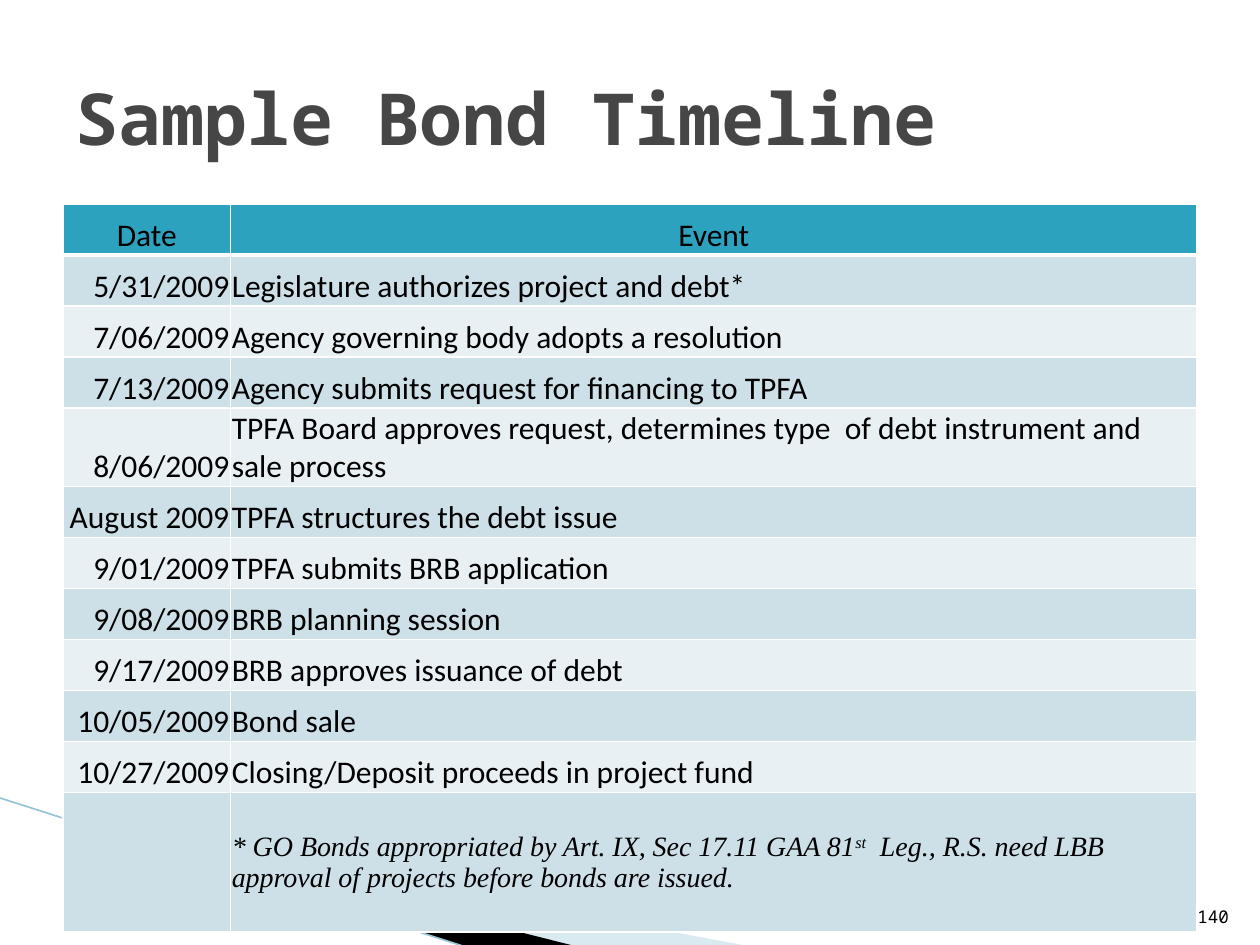
from dataclasses import dataclass
from typing import NamedTuple

from lxml import etree
from pptx import Presentation
from pptx import util as u
from pptx.dml.color import RGBColor
from pptx.enum import shapes, text
from pptx.oxml import ns

ALIGN = text.PP_ALIGN
ANCHOR = text.MSO_ANCHOR


@dataclass(frozen=True)
class Theme:
    heading: str = "464646"
    ink: str = "000000"
    rule: str = "FFFFFF"
    header: str = "2DA2BF"
    bands: tuple[str, str] = ("CDE0E8", "E8F0F4")
    swoosh: str = "A0CBDC"
    edge: str = "97C5D8"
    mono: str = "Noto Sans Mono"
    body: str = "Calibri"
    serif: str = "Times New Roman"
    title_size: float = 41
    body_size: float = 18
    note_size: float = 16
    number_size: float = 10


THEME = Theme()


class Milestone(NamedTuple):
    date: str
    event: str
    lines: int = 1


class Wedge(NamedTuple):
    points: list[tuple[float, float]]
    color: str
    opacity: int = 100


WEDGES = [
    Wedge([(0.55, 6.51), (5.95, 7.51), (4.56, 7.51), (0.55, 6.5)], THEME.swoosh, 40),
    Wedge([(0.53, 6.49), (4.57, 7.51), (3.72, 7.52), (0.54, 6.5)], THEME.ink),
]

MILESTONES = [
    Milestone("5/31/2009", "Legislature authorizes project and debt*"),
    Milestone("7/06/2009", "Agency governing body adopts a resolution"),
    Milestone("7/13/2009", "Agency submits request for financing to TPFA"),
    Milestone("8/06/2009", "TPFA Board approves request, determines type  of debt "
                           "instrument and sale process", lines=2),
    Milestone("August 2009", "TPFA structures the debt issue"),
    Milestone("9/01/2009", "TPFA submits BRB application"),
    Milestone("9/08/2009", "BRB planning session"),
    Milestone("9/17/2009", "BRB approves issuance of debt"),
    Milestone("10/05/2009", "Bond sale"),
    Milestone("10/27/2009", "Closing/Deposit proceeds in project fund"),
]

# Row heights: single-line rows share what the two tall rows leave
TABLE_HEIGHT, TWO_LINE_ROW, NOTE_ROW = 5.78, 0.62, 1.11
SINGLE_ROW = (TABLE_HEIGHT - TWO_LINE_ROW - NOTE_ROW) / len(MILESTONES)


def write(paragraph, words: str, *, font: str = THEME.body,
          size: float = THEME.body_size, color: str = THEME.ink, bold: bool = False,
          italic: bool = False, align=ALIGN.LEFT, raised: bool = False) -> None:
    """Add one formatted run to a paragraph."""
    paragraph.alignment = align
    run = paragraph.add_run()
    run.text = words
    run.font.name = font
    run.font.size = u.Pt(size)
    run.font.bold = bold
    run.font.italic = italic
    run.font.color.rgb = RGBColor.from_string(color)
    if raised:
        run._r.get_or_add_rPr().set("baseline", "30000")


def draw_wedge(slide, wedge: Wedge) -> None:
    start, *rest = [(u.Inches(x), u.Inches(y)) for x, y in wedge.points]
    builder = slide.shapes.build_freeform(*start)
    builder.add_line_segments(rest, close=True)
    shape = builder.convert_to_shape()
    shape.shadow.inherit = False
    shape.line.fill.background()
    shape.fill.solid()
    shape.fill.fore_color.rgb = RGBColor.from_string(wedge.color)
    if wedge.opacity < 100:
        color = shape._element.spPr.find(".//" + ns.qn("a:srgbClr"))
        etree.SubElement(color, ns.qn("a:alpha"), val=str(wedge.opacity * 1000))


def draw_edge(slide) -> None:
    edge = slide.shapes.add_connector(
        shapes.MSO_CONNECTOR.STRAIGHT,
        u.Inches(-0.01), u.Inches(6.33), u.Inches(3.71), u.Inches(7.52))
    edge.line.color.rgb = RGBColor.from_string(THEME.edge)
    edge.line.width = u.Pt(0.95)
    etree.SubElement(edge._element.spPr, ns.qn("a:effectLst"))


def style_cell(cell, fill: str, bottom: float = 1, top: float = 1) -> None:
    """Set a cell's margins, white borders and fill."""
    cell.margin_left = cell.margin_right = cell.margin_top = u.Inches(0.01)
    cell.margin_bottom = 0
    cell.vertical_anchor = ANCHOR.BOTTOM
    properties = cell._tc.get_or_add_tcPr()
    for side, width in (("L", 1), ("R", 1), ("T", top), ("B", bottom)):
        border = etree.SubElement(properties, ns.qn(f"a:ln{side}"), w=str(u.Pt(width)))
        solid = etree.SubElement(border, ns.qn("a:solidFill"))
        etree.SubElement(solid, ns.qn("a:srgbClr"), val=THEME.rule)
    cell.fill.solid()
    cell.fill.fore_color.rgb = RGBColor.from_string(fill)


def draw_timeline(slide) -> None:
    count = len(MILESTONES) + 2
    table = slide.shapes.add_table(
        count, 2, u.Inches(0.5), u.Inches(1.62),
        u.Inches(9), u.Inches(TABLE_HEIGHT)).table
    for column, width in zip(table.columns, (1.33, 7.67)):
        column.width = u.Inches(width)

    # Header
    table.rows[0].height = u.Inches(SINGLE_ROW)
    for cell, heading in zip(table.rows[0].cells, ("Date", "Event")):
        style_cell(cell, THEME.header, bottom=3)
        write(cell.text_frame.paragraphs[0], heading, align=ALIGN.CENTER)

    # Banded body, footnote row included
    for index in range(1, count):
        for cell in table.rows[index].cells:
            style_cell(cell, THEME.bands[(index - 1) % 2], top=3 if index == 1 else 1)

    # Milestones
    for index, milestone in enumerate(MILESTONES, start=1):
        row = table.rows[index]
        row.height = u.Inches(SINGLE_ROW if milestone.lines == 1 else TWO_LINE_ROW)
        date, event = (cell.text_frame.paragraphs[0] for cell in row.cells)
        write(date, milestone.date, align=ALIGN.RIGHT)
        write(event, milestone.event)

    # Footnote
    table.rows[count - 1].height = u.Inches(NOTE_ROW)
    footnote = table.cell(count - 1, 1)
    footnote.vertical_anchor = ANCHOR.MIDDLE
    for words, raised in (
            ("* GO Bonds appropriated by Art. IX, Sec 17.11 GAA 81", False),
            ("st", True),
            ("  Leg., R.S. need LBB approval of projects before bonds are issued.", False)):
        write(footnote.text_frame.paragraphs[0], words, font=THEME.serif,
              size=THEME.note_size, italic=True, raised=raised)


def draw_title(slide) -> None:
    title = slide.shapes.title
    title.left, title.top = u.Inches(0.5), u.Inches(0.3)
    title.width, title.height = u.Inches(9), u.Inches(1.25)
    title.text_frame.vertical_anchor = ANCHOR.MIDDLE
    write(title.text_frame.paragraphs[0], "Sample Bond Timeline", font=THEME.mono,
          size=THEME.title_size, color=THEME.heading, bold=True)


def draw_page_number(slide) -> None:
    frame = slide.shapes.add_textbox(
        u.Inches(9.33), u.Inches(7.01), u.Inches(0.52), u.Inches(0.4)).text_frame
    frame.word_wrap = True
    frame.vertical_anchor = ANCHOR.BOTTOM
    write(frame.paragraphs[0], "140", font=THEME.mono, size=THEME.number_size,
          align=ALIGN.RIGHT)


def main() -> None:
    deck = Presentation()
    deck.slide_width, deck.slide_height = u.Inches(10), u.Inches(7.5)
    slide = deck.slides.add_slide(deck.slide_layouts[5])
    for wedge in WEDGES:
        draw_wedge(slide, wedge)
    draw_edge(slide)
    draw_timeline(slide)
    draw_title(slide)
    draw_page_number(slide)
    deck.save("out.pptx")


if __name__ == "__main__":
    main()
